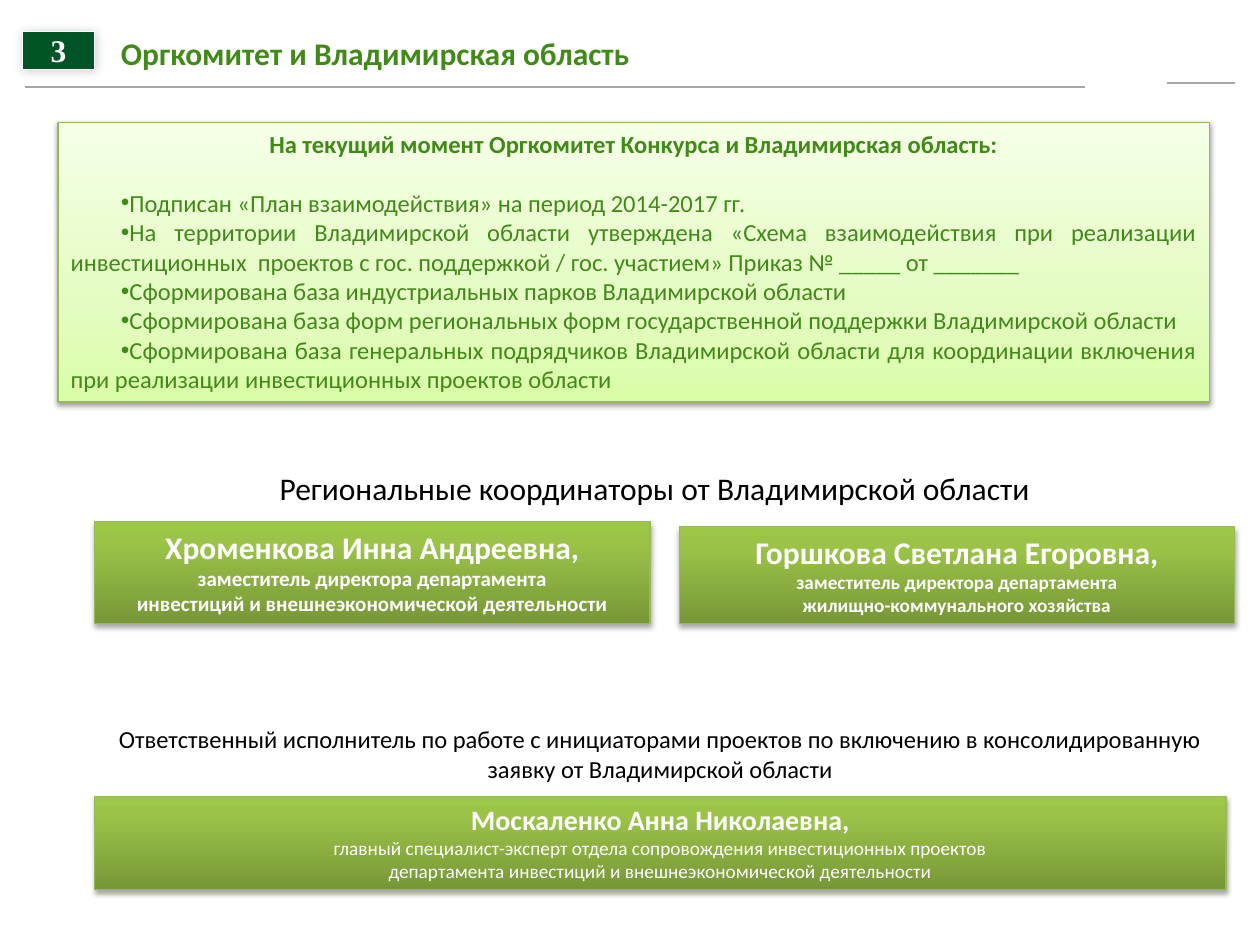
from pptx import Presentation
from pptx.dml.color import RGBColor
from pptx.enum.shapes import MSO_CONNECTOR, MSO_SHAPE
from pptx.enum.text import MSO_ANCHOR, MSO_AUTO_SIZE, PP_ALIGN
from pptx.oxml.ns import qn
from pptx.util import Inches, Pt
from lxml import etree

RECTANGLE = MSO_SHAPE.RECTANGLE
STRAIGHT = MSO_CONNECTOR.STRAIGHT
LEFT, CENTER, JUSTIFY = PP_ALIGN.LEFT, PP_ALIGN.CENTER, PP_ALIGN.JUSTIFY
TOP, MIDDLE = MSO_ANCHOR.TOP, MSO_ANCHOR.MIDDLE
NO_FIT = MSO_AUTO_SIZE.NONE

GREEN, WHITE, BLACK, GRAY = "418A18", "FFFFFF", "000000", "A6A6A6"
BADGE_GREEN, EDGE_GREEN = "005426", "98B955"
PALE_STOPS = [(0, "DAFDA7"), (35, "E4FCC2"), (100, "F5FFE7")]
CARD_STOPS = [(0, "779737"), (80, "9BC348"), (100, "9DC746")]

deck = Presentation()
deck.slide_width, deck.slide_height = Inches(10), Inches(7.5)
CELL = deck.slide_width // 100  # grid of 100 columns by 75 rows
page = deck.slides.add_slide(deck.slide_layouts[1])


def style(box, place, fill=None, edge=None, shadow=None, anchor=TOP, inset=None):
    """Place a box in grid cells; fill is a hex string or a list of stops."""
    for side, cells in zip(("left", "top", "width", "height"), place):
        setattr(box, side, int(cells * CELL))
    if isinstance(fill, list):
        box.fill.gradient()
        box.fill.gradient_angle = 90
        stops = box.fill._fill._gradFill.find(qn("a:gsLst"))
        stops.clear()
        for position, color in fill:
            stop = etree.SubElement(stops, qn("a:gs"), pos=str(position * 1000))
            etree.SubElement(stop, qn("a:srgbClr"), val=color)
    elif fill:
        box.fill.solid()
        box.fill.fore_color.rgb = RGBColor.from_string(fill)
    if edge:
        box.line.color.rgb = RGBColor.from_string(edge)
        box.line.width = Pt(0.75)
    else:
        box.line.fill.background()
    effects = etree.SubElement(box._element.spPr, qn("a:effectLst"))
    if shadow:
        alpha, blur, distance, angle = shadow
        outer = etree.SubElement(effects, qn("a:outerShdw"), blurRad=str(Pt(blur)),
                                 dist=str(Pt(distance)), dir=str(angle * 60000), rotWithShape="0")
        tint = etree.SubElement(outer, qn("a:srgbClr"), val=BLACK)
        etree.SubElement(tint, qn("a:alpha"), val=str(alpha * 1000))
    frame = box.text_frame
    frame.auto_size, frame.word_wrap, frame.vertical_anchor = NO_FIT, True, anchor
    if inset is not None:
        for side in ("left", "top", "right", "bottom"):
            setattr(frame, "margin_" + side, inset)


def write(box, lines, color, align=CENTER, bullet=False, font="Calibri"):
    """Append lines of (text, size, bold) as paragraphs."""
    frame = box.text_frame
    for text, size, bold in lines:
        para = frame.add_paragraph() if frame.text else frame.paragraphs[0]
        para.alignment, para.space_before = align, Pt(0)
        layout = para._p.get_or_add_pPr()
        layout.set("marL", "0")
        layout.set("indent", str(Inches(0.4)) if bullet else "0")
        if bullet:
            etree.SubElement(layout, qn("a:buChar"), char="•")
        else:
            etree.SubElement(layout, qn("a:buNone"))
        span = para.add_run()
        span.text = text
        for name, value in {"name": font, "size": Pt(size), "bold": bold}.items():
            setattr(span.font, name, value)
        span.font.color.rgb = RGBColor.from_string(color)


# Header rules
for start, end, row in [(2, 86.1, 6.9), (92.6, 98, 6.6)]:
    rule = page.shapes.add_connector(STRAIGHT, *(int(n * CELL) for n in (start, row, end, row)))
    rule.line.color.rgb = RGBColor.from_string(GRAY)
    rule.line.width = Pt(1)
    etree.SubElement(rule._element.spPr, qn("a:effectLst"))

# Title and page number
title = page.shapes.title
style(title, (9.6, 2.7, 55.9, 3), anchor=MIDDLE, inset=0)
write(title, [("Оргкомитет и Владимирская область", 18, True)], GREEN, LEFT)

badge = page.shapes.add_shape(RECTANGLE, 0, 0, 0, 0)
style(badge, (1.8, 2.5, 5.7, 3), BADGE_GREEN, WHITE, (20, 6, 1, 45), MIDDLE, 0)
write(badge, [("3", 18, True)], WHITE, font="Times New Roman")

# Current status list
status = page.placeholders[1]
style(status, (4.6, 9.7, 91.4, 22.2), PALE_STOPS, EDGE_GREEN, (38, 3.1, 1.6, 90))
write(status, [("На текущий момент Оргкомитет Конкурса и Владимирская область:", 14, True)], GREEN)
status.text_frame.paragraphs[0].space_after = Pt(17)
achievements = [
    "Подписан «План взаимодействия» на период 2014-2017 гг.",
    "На территории Владимирской области утверждена «Схема взаимодействия при реализации "
    "инвестиционных  проектов с гос. поддержкой / гос. участием» Приказ № _____ от _______",
    "Сформирована база индустриальных парков Владимирской области",
    "Сформирована база форм региональных форм государственной поддержки Владимирской области",
    "Сформирована база генеральных подрядчиков Владимирской области для координации включения "
    "при реализации инвестиционных проектов области",
]
write(status, [(text, 14, False) for text in achievements], GREEN, JUSTIFY, bullet=True)

# Section captions
coordinators = page.shapes.add_textbox(0, 0, 0, 0)
style(coordinators, (21.2, 36.7, 62.2, 4))
coordinators.text_frame.word_wrap = False
write(coordinators, [("Региональные координаторы от Владимирской области", 18, False)], BLACK, LEFT)

executor = page.shapes.add_shape(RECTANGLE, 0, 0, 0, 0)
style(executor, (7.5, 57, 89.8, 5.7), WHITE)
write(executor, [("Ответственный исполнитель по работе с инициаторами проектов по включению "
                  "в консолидированную заявку от Владимирской области", 14, False)], BLACK)

# Cards of people: place, name and its size, position lines with size and weight
cards = [
    ((7.5, 41.4, 44.1, 8.1), "Хроменкова Инна Андреевна,", 18,
     ["заместитель директора департамента",
      "инвестиций и внешнеэкономической деятельности"], 12, True),
    ((53.9, 41.8, 44.1, 7.7), "Горшкова Светлана Егоровна,", 18,
     ["заместитель директора департамента", "жилищно-коммунального хозяйства"], 11, True),
    ((7.5, 63.2, 89.8, 7.4), "Москаленко Анна Николаевна,", 16,
     ["главный специалист-эксперт отдела сопровождения инвестиционных проектов",
      "департамента инвестиций и внешнеэкономической деятельности"], 11, False),
]
for place, person, name_size, duties, duty_size, bold in cards:
    card = page.shapes.add_shape(RECTANGLE, 0, 0, 0, 0)
    style(card, place, CARD_STOPS, EDGE_GREEN, (35, 3.1, 1.8, 90))
    write(card, [(person, name_size, True)] + [(duty, duty_size, bold) for duty in duties], WHITE)

deck.save("out.pptx")
